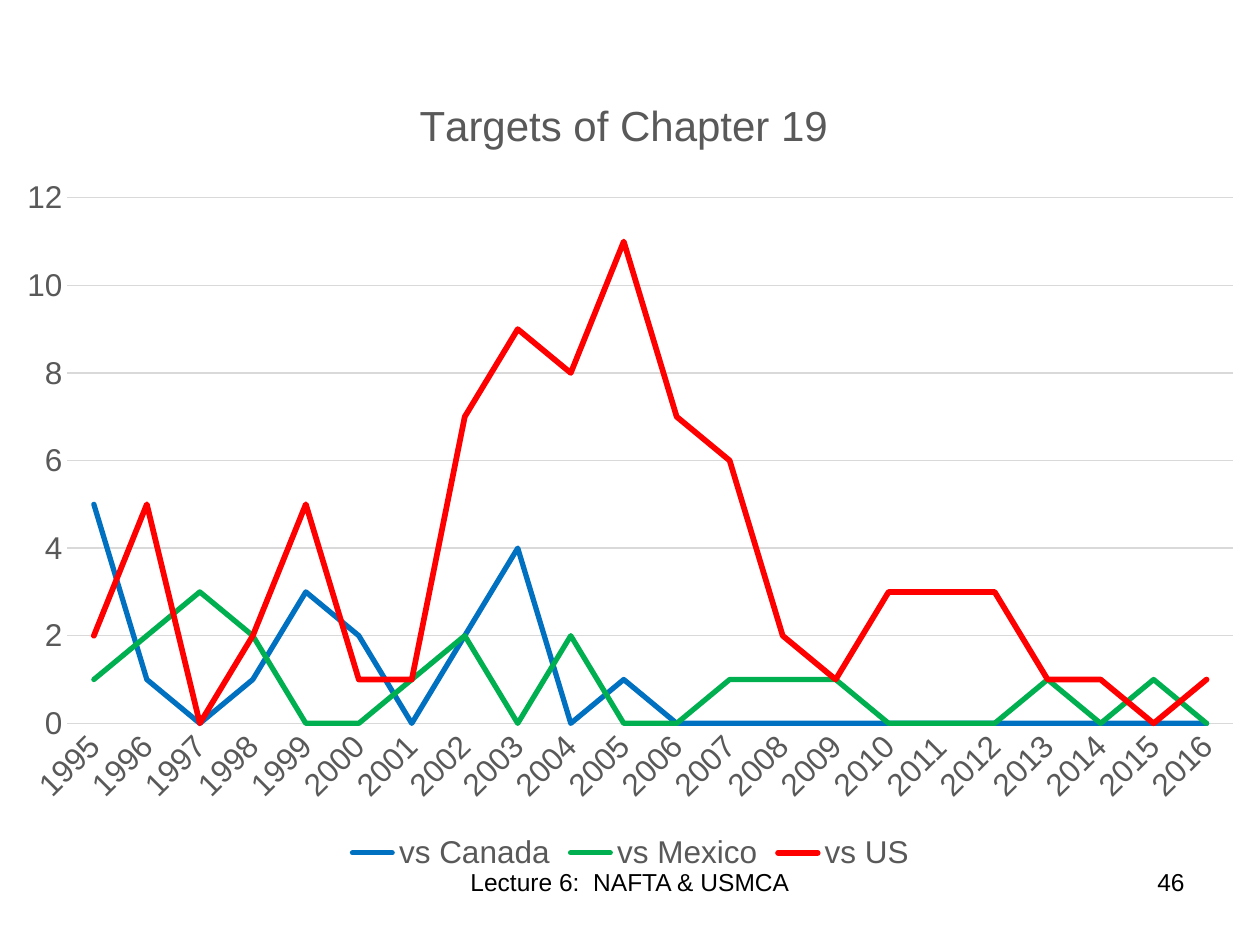
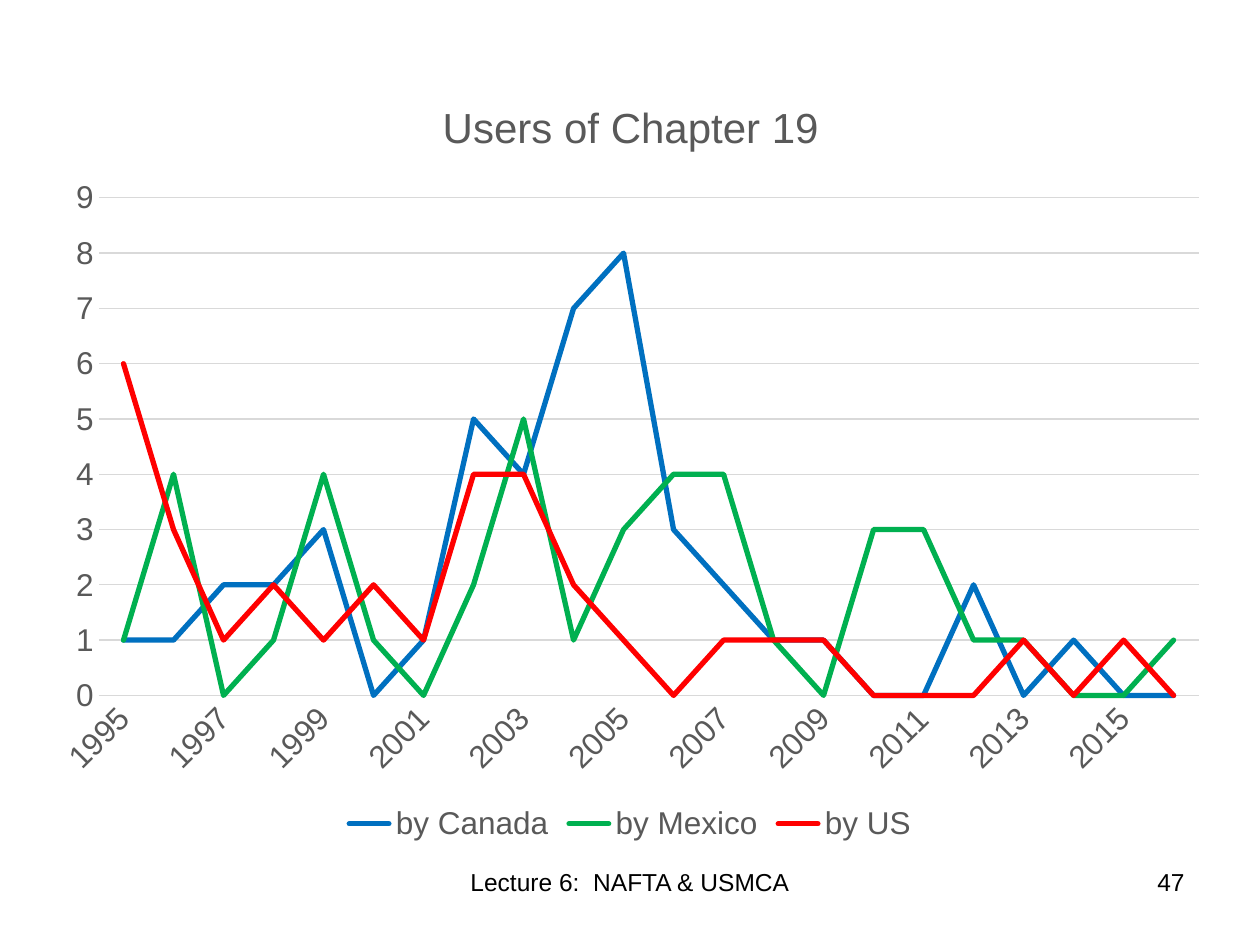
from dataclasses import dataclass

from lxml import etree
from pptx import Presentation
from pptx.chart.data import CategoryChartData
from pptx.dml.color import RGBColor
from pptx.enum import chart as kinds, text
from pptx.oxml.ns import qn
from pptx.util import Pt

FONT = "Arial"
BLACK = RGBColor(0x00, 0x00, 0x00)
GREY = RGBColor(0x59, 0x59, 0x59)
RULE = RGBColor(0xD9, 0xD9, 0xD9)
BLUE = RGBColor(0x00, 0x70, 0xC0)
GREEN = RGBColor(0x00, 0xB0, 0x50)
RED = RGBColor(0xFF, 0x00, 0x00)

FOOTER = "Lecture 6:  NAFTA & USMCA"
FIRST_PAGE = 46
YEARS = [str(year) for year in range(1995, 2017)]


@dataclass(frozen=True)
class Box:
    left: float
    top: float
    width: float = 0
    height: float = 0

    def lengths(self) -> list:
        return [Pt(v) for v in (self.left, self.top, self.width, self.height)]


@dataclass(frozen=True)
class Line:
    name: str
    color: RGBColor
    cases: list[int]
    weight: float = 3


@dataclass(frozen=True)
class Trend:
    """A line chart; its title and plot are placed in slide points."""
    title: str
    box: Box
    head: Box
    plot: Box
    lines: list[Line]


FOOTER_BOX = Box(246, 492, 228, 37.5)
PAGE_BOX = Box(516, 492, 168, 37.5)

TRENDS = [
    Trend("Targets of Chapter 19", Box(1.44, 38.88, 717.84, 462.24),
          Box(235.4, 52), Box(38.5, 113, 666.2, 300.4), [
        Line("vs Canada", BLUE, [5, 1, 0, 1, 3, 2, 0, 2, 4, 0, 1,
                                 0, 0, 0, 0, 0, 0, 0, 0, 0, 0, 0]),
        Line("vs Mexico", GREEN, [1, 2, 3, 2, 0, 0, 1, 2, 0, 2, 0,
                                  0, 1, 1, 1, 0, 0, 0, 1, 0, 1, 0]),
        Line("vs US", RED, [2, 5, 0, 2, 5, 1, 1, 7, 9, 8, 11,
                            7, 6, 2, 1, 3, 3, 3, 1, 1, 0, 1], 3.25),
    ]),
    Trend("Users of Chapter 19", Box(21.6, 40.32, 676.8, 444.24),
          Box(248.7, 53.2), Box(56.3, 113.1, 628.7, 284.4), [
        Line("by Canada", BLUE, [1, 1, 2, 2, 3, 0, 1, 5, 4, 7, 8,
                                 3, 2, 1, 1, 0, 0, 2, 0, 1, 0, 0]),
        Line("by Mexico", GREEN, [1, 4, 0, 1, 4, 1, 0, 2, 5, 1, 3,
                                  4, 4, 1, 0, 3, 3, 1, 1, 0, 0, 1]),
        Line("by US", RED, [6, 3, 1, 2, 1, 2, 1, 4, 4, 2, 1,
                            0, 1, 1, 1, 0, 0, 0, 1, 0, 1, 0]),
    ]),
]


def style(font, size: float, color: RGBColor) -> None:
    font.name, font.size, font.bold = FONT, Pt(size), False
    font.color.rgb = color


def write(slide, words: str, box: Box, *, size: float = 14,
          color: RGBColor = BLACK, align=text.PP_ALIGN.LEFT) -> None:
    frame = slide.shapes.add_textbox(*box.lengths()).text_frame
    frame.word_wrap = True
    para = frame.paragraphs[0]
    para.alignment = align
    run = para.add_run()
    run.text = words
    style(run.font, size, color)


def place(part, spot: Box, chart: Box, before: str | None = None) -> None:
    """Fix a chart part at a spot, stored as fractions of the chart."""
    for old in part.findall(qn("c:layout")):
        part.remove(old)
    layout = etree.Element(qn("c:layout"))
    manual = etree.SubElement(layout, qn("c:manualLayout"))
    parts = {"x": (spot.left - chart.left) / chart.width,
             "y": (spot.top - chart.top) / chart.height}
    if spot.width:
        etree.SubElement(manual, qn("c:layoutTarget")).set("val", "inner")
        parts |= {"w": spot.width / chart.width,
                  "h": spot.height / chart.height}
    for side in ("x", "y"):
        etree.SubElement(manual, qn(f"c:{side}Mode")).set("val", "edge")
    for key, value in parts.items():
        etree.SubElement(manual, qn(f"c:{key}")).set("val", f"{value:.5f}")
    if before:
        part.find(qn(before)).addprevious(layout)
    else:
        part.insert(0, layout)


def dress_axes(chart) -> None:
    years, count = chart.category_axis, chart.value_axis
    for axis in (years, count):
        axis.major_tick_mark = axis.minor_tick_mark = kinds.XL_TICK_MARK.NONE
        style(axis.tick_labels.font, 18, GREY)
    count.has_major_gridlines = True
    for rule in (years.format.line, count.major_gridlines.format.line):
        rule.color.rgb, rule.width = RULE, Pt(0.75)
    count.format.line.fill.background()


def add_trend(slide, trend: Trend) -> None:
    data = CategoryChartData()
    data.categories = YEARS
    for line in trend.lines:
        data.add_series(line.name, line.cases)
    chart = slide.shapes.add_chart(
        kinds.XL_CHART_TYPE.LINE, *trend.box.lengths(), data).chart
    style(chart.font, 10, BLACK)

    chart.has_title = True
    title = chart.chart_title
    run = title.text_frame.paragraphs[0].add_run()
    run.text = trend.title
    style(run.font, 24, GREY)
    title.include_in_layout = False
    place(title._element, trend.head, trend.box, "c:overlay")

    dress_axes(chart)
    chart.plots[0].vary_by_categories = False
    for series, line in zip(chart.plots[0].series, trend.lines):
        series.smooth = False
        series.marker.style = kinds.XL_MARKER_STYLE.NONE
        stroke = series.format.line
        stroke.color.rgb, stroke.width = line.color, Pt(line.weight)
        stroke._get_or_add_ln().set("cap", "rnd")
    place(chart._chartSpace.chart.plotArea, trend.plot, trend.box)

    chart.has_legend = True
    chart.legend.position = kinds.XL_LEGEND_POSITION.BOTTOM
    chart.legend.include_in_layout = False
    style(chart.legend.font, 18, GREY)


def main() -> None:
    deck = Presentation()
    deck.slide_width, deck.slide_height = Pt(720), Pt(540)
    blank = deck.slide_layouts.get_by_name("Blank")
    for page, trend in enumerate(TRENDS, FIRST_PAGE):
        slide = deck.slides.add_slide(blank)
        write(slide, str(page), PAGE_BOX, align=text.PP_ALIGN.RIGHT)
        write(slide, FOOTER, FOOTER_BOX, align=text.PP_ALIGN.CENTER)
        add_trend(slide, trend)
    deck.save("out.pptx")


if __name__ == "__main__":
    main()
